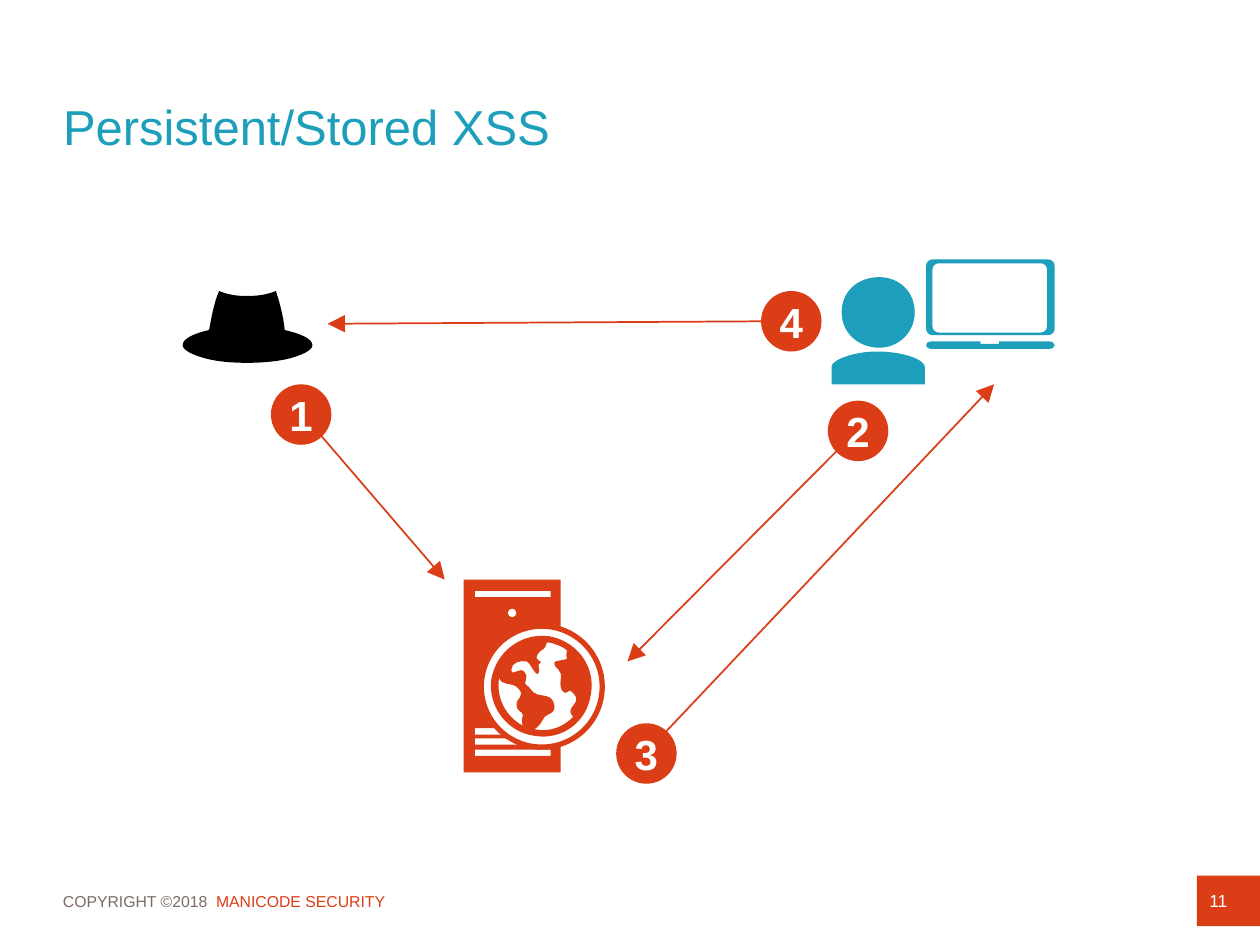
from lxml import etree
from pptx import Presentation
from pptx import util as u
from pptx.dml.color import RGBColor
from pptx.enum import shapes, text
from pptx.oxml.ns import qn

COLORS = {"red": "DB3D16", "blue": "1D9EBA", "gray": "7A6C62",
          "black": "000000", "white": "FFFFFF"}
FONT = "Arial"
BADGE = 0.48


def box(left, top, right, bottom):
    return [(left, top), (right, top), (right, bottom), (left, bottom)]


def rounded(left, top, right, bottom, radius):
    """Contour of a rectangle with round corners."""
    k = radius * 0.45
    return [
        (left + radius, top), (right - radius, top),
        (right - k, top, right, top + k, right, top + radius),
        (right, bottom - radius),
        (right, bottom - k, right - k, bottom, right - radius, bottom),
        (left + radius, bottom),
        (left + k, bottom, left, bottom - k, left, bottom - radius),
        (left, top + radius),
        (left, top + k, left + k, top, left + radius, top),
    ]


def all_points(contour):
    """Points and curve control points of a contour, in order."""
    return [(u.Inches(segment[i]), u.Inches(segment[i + 1]))
            for segment in contour for i in range(0, len(segment), 2)]


def bend(shape, contours):
    """Join the three lines of each 6-number segment into one cubic curve."""
    outline = next(shape._element.iter(qn("a:path")))
    lines = outline.iterchildren(qn("a:lnTo"))
    lines = iter(list(lines))
    for contour in contours:
        for segment in contour[1:]:
            parts = [next(lines) for _ in range(len(segment) // 2)]
            if len(parts) == 3:
                curve = etree.Element(qn("a:cubicBezTo"))
                parts[0].addprevious(curve)
                for part in parts:
                    curve.append(part[0])
                    outline.remove(part)


# Contours: two numbers are a corner, six numbers are a cubic curve.
SCREEN = [rounded(7.4, 2.09, 8.31, 2.64, 0.05), rounded(7.35, 2.06, 8.37, 2.66, 0.05)]
KEYBOARD = [[
    (7.39, 2.71), (7.78, 2.71), (7.78, 2.73), (7.93, 2.73), (7.93, 2.71), (8.32, 2.71),
    (8.35, 2.71, 8.37, 2.72, 8.37, 2.74), (8.37, 2.76, 8.35, 2.77, 8.32, 2.77),
    (7.39, 2.77), (7.37, 2.77, 7.35, 2.76, 7.35, 2.74),
    (7.35, 2.72, 7.37, 2.71, 7.39, 2.71),
]]
HAT = [[
    (2.26, 2.62), (2.25, 2.51, 2.22, 2.4, 2.19, 2.31), (2.12, 2.34, 2.04, 2.35, 1.96, 2.35),
    (1.88, 2.35, 1.81, 2.34, 1.74, 2.31), (1.7, 2.4, 1.68, 2.51, 1.66, 2.62),
    (1.53, 2.65, 1.45, 2.69, 1.45, 2.74), (1.45, 2.78, 1.53, 2.82, 1.65, 2.85),
    (1.73, 2.87, 1.84, 2.88, 1.96, 2.88), (2.08, 2.88, 2.19, 2.87, 2.28, 2.85),
    (2.4, 2.82, 2.48, 2.78, 2.48, 2.74), (2.48, 2.69, 2.39, 2.65, 2.26, 2.62),
]]
SHOULDERS = [[
    (6.96, 2.79), (7.18, 2.79, 7.34, 2.86, 7.34, 2.91), (7.34, 3.05), (6.6, 3.05),
    (6.6, 2.91), (6.6, 2.86, 6.77, 2.79, 6.96, 2.79),
]]
HEAD = [[
    (6.68, 2.48), (6.68, 2.31, 6.81, 2.2, 6.98, 2.2), (7.13, 2.2, 7.26, 2.31, 7.26, 2.48),
    (7.26, 2.64, 7.13, 2.76, 6.98, 2.76), (6.81, 2.76, 6.68, 2.64, 6.68, 2.48),
]]
SERVER = [box(3.68, 4.6, 4.45, 6.13), rounded(4.03, 4.83, 4.1, 4.9, 0.035)]
SERVER += [box(3.77, top, 4.37, top + 0.05) for top in (4.69, 5.78, 5.86, 5.95)]
GLOBE = [
    [(4.36, 5.05), (4.14, 5.02, 3.94, 5.17, 3.9, 5.39), (3.87, 5.6, 4.02, 5.81, 4.24, 5.84),
     (4.46, 5.88, 4.66, 5.73, 4.69, 5.51), (4.73, 5.29, 4.58, 5.09, 4.36, 5.05)],
    [(4.15, 5.76), (4.02, 5.69, 3.94, 5.55, 3.96, 5.39), (3.96, 5.38),
     (3.99, 5.45, 4.06, 5.41, 4.11, 5.46), (4.18, 5.53, 4.09, 5.54, 4.1, 5.6),
     (4.11, 5.66, 4.15, 5.64, 4.15, 5.68), (4.14, 5.71, 4.14, 5.74, 4.15, 5.76)],
    [(4.55, 5.69), (4.47, 5.77, 4.37, 5.81, 4.25, 5.79), (4.24, 5.79),
     (4.27, 5.77, 4.29, 5.75, 4.31, 5.71), (4.32, 5.67, 4.39, 5.67, 4.4, 5.63),
     (4.4, 5.62, 4.41, 5.58, 4.37, 5.54), (4.34, 5.52, 4.29, 5.52, 4.26, 5.51),
     (4.22, 5.5, 4.2, 5.44, 4.18, 5.44), (4.14, 5.42, 4.21, 5.39, 4.16, 5.33),
     (4.13, 5.29, 4.05, 5.38, 4.06, 5.31), (4.06, 5.26, 4.13, 5.24, 4.18, 5.25),
     (4.21, 5.26, 4.24, 5.35, 4.27, 5.35), (4.3, 5.33, 4.25, 5.27, 4.29, 5.26),
     (4.32, 5.25, 4.23, 5.25, 4.27, 5.19), (4.32, 5.13, 4.32, 5.17, 4.34, 5.1),
     (4.36, 5.1), (4.41, 5.11, 4.46, 5.13, 4.5, 5.16), (4.5, 5.17, 4.49, 5.21, 4.5, 5.22),
     (4.52, 5.24, 4.4, 5.24, 4.4, 5.26), (4.4, 5.32, 4.47, 5.3, 4.45, 5.4),
     (4.44, 5.48, 4.48, 5.52, 4.51, 5.49), (4.52, 5.46, 4.56, 5.51, 4.57, 5.53),
     (4.6, 5.59, 4.48, 5.62, 4.55, 5.69)],
]


class SlideBuilder:
    def __init__(self, slide):
        self.slide = slide

    def color(self, name):
        return RGBColor.from_string(COLORS[name])

    def style(self, run, size, color, bold=False):
        run.font.name, run.font.size, run.font.bold = FONT, u.Pt(size), bold
        run.font.color.rgb = self.color(color)

    def frame(self, shape, inset=0.0):
        """Text frame centred vertically with equal side insets."""
        frame = shape.text_frame
        frame.word_wrap = True
        frame.vertical_anchor = text.MSO_ANCHOR.MIDDLE
        frame.margin_left = frame.margin_right = u.Inches(inset)
        frame.margin_top = frame.margin_bottom = 0
        return frame

    def title(self, words):
        shape = self.slide.shapes.title
        shape.left, shape.top, shape.width, shape.height = map(u.Inches, (0.5, 0.5, 9, 1))
        frame = self.frame(shape)
        frame.text = words
        frame.paragraphs[0].alignment = text.PP_ALIGN.LEFT
        self.style(frame.paragraphs[0].runs[0], 28, "blue")

    def footer(self, parts):
        shape = self.slide.shapes.add_textbox(*map(u.Inches, (0.5, 6.95, 9, 0.4)))
        paragraph = self.frame(shape).paragraphs[0]
        for words, color in parts:
            run = paragraph.add_run()
            run.text = words
            self.style(run, 9, color)

    def shape(self, kind, left, top, width, height, fill="red", line=None):
        shape = self.slide.shapes.add_shape(kind, *map(u.Inches, (left, top, width, height)))
        return self.paint(shape, fill, line)

    def paint(self, shape, fill, line=None):
        shape.shadow.inherit = False
        shape.fill.solid()
        shape.fill.fore_color.rgb = self.color(fill)
        if line:
            shape.line.color.rgb, shape.line.width = self.color(line), u.Pt(3)
        else:
            shape.line.fill.background()
        return shape

    def label(self, shape, words, size, align, bold=False, inset=0.0):
        frame = self.frame(shape, inset)
        frame.text = words
        frame.paragraphs[0].alignment = align
        self.style(frame.paragraphs[0].runs[0], size, "white", bold)

    def badge(self, number, left, top):
        shape = self.shape(shapes.MSO_SHAPE.OVAL, left, top, BADGE, BADGE)
        self.label(shape, number, 24, text.PP_ALIGN.CENTER, bold=True)

    def arrow(self, start, end):
        line = self.slide.shapes.add_connector(
            shapes.MSO_CONNECTOR.STRAIGHT, *map(u.Inches, start + end))
        line.line.color.rgb, line.line.width = self.color("red"), u.Pt(1)
        etree.SubElement(line.line._get_or_add_ln(), qn("a:tailEnd"),
                         type="triangle", w="lg", len="lg")
        etree.SubElement(line._element.spPr, qn("a:effectLst"))

    def icon(self, fill, *outlines):
        """Draw each outline; several outlines become one group."""
        parent = self.slide.shapes
        if len(outlines) > 1:
            parent = parent.add_group_shape().shapes
        for contours in outlines:
            first, *others = map(all_points, contours)
            builder = parent.build_freeform(*first[0], scale=1.0)
            builder.add_line_segments(first[1:], close=True)
            for points in others:
                builder.move_to(*points[0])
                builder.add_line_segments(points[1:], close=True)
            shape = self.paint(builder.convert_to_shape(), fill)
            bend(shape, contours)


def main():
    presentation = Presentation()
    presentation.slide_width, presentation.slide_height = u.Inches(10), u.Inches(7.5)
    page = SlideBuilder(presentation.slides.add_slide(presentation.slide_layouts[5]))
    page.footer([("COPYRIGHT ©2018  ", "gray"), ("MANICODE SECURITY", "red")])
    for start, end in [((6.69, 3.53), (4.98, 5.25)), ((4.98, 6.13), (7.89, 3.05)),
                       ((6.04, 2.55), (2.6, 2.57)), ((2.55, 3.46), (3.53, 4.6))]:
        page.arrow(start, end)
    page.title("Persistent/Stored XSS")
    number = page.shape(shapes.MSO_SHAPE.RECTANGLE, 9.5, 6.95, 0.5, 0.4)
    page.label(number, "11", 10, text.PP_ALIGN.LEFT, inset=0.1)
    page.icon("blue", SCREEN, KEYBOARD)
    page.icon("black", HAT)
    page.icon("blue", SHOULDERS, HEAD)
    for step, left, top in [("2", 6.57, 3.18), ("3", 4.89, 5.74),
                            ("4", 6.04, 2.31), ("1", 2.15, 3.05)]:
        page.badge(step, left, top)
    page.icon("red", SERVER)
    page.shape(shapes.MSO_SHAPE.OVAL, 3.82, 4.97, 0.96, 0.96, fill="white", line="red")
    page.icon("red", GLOBE)
    presentation.save("out.pptx")


if __name__ == "__main__":
    main()
